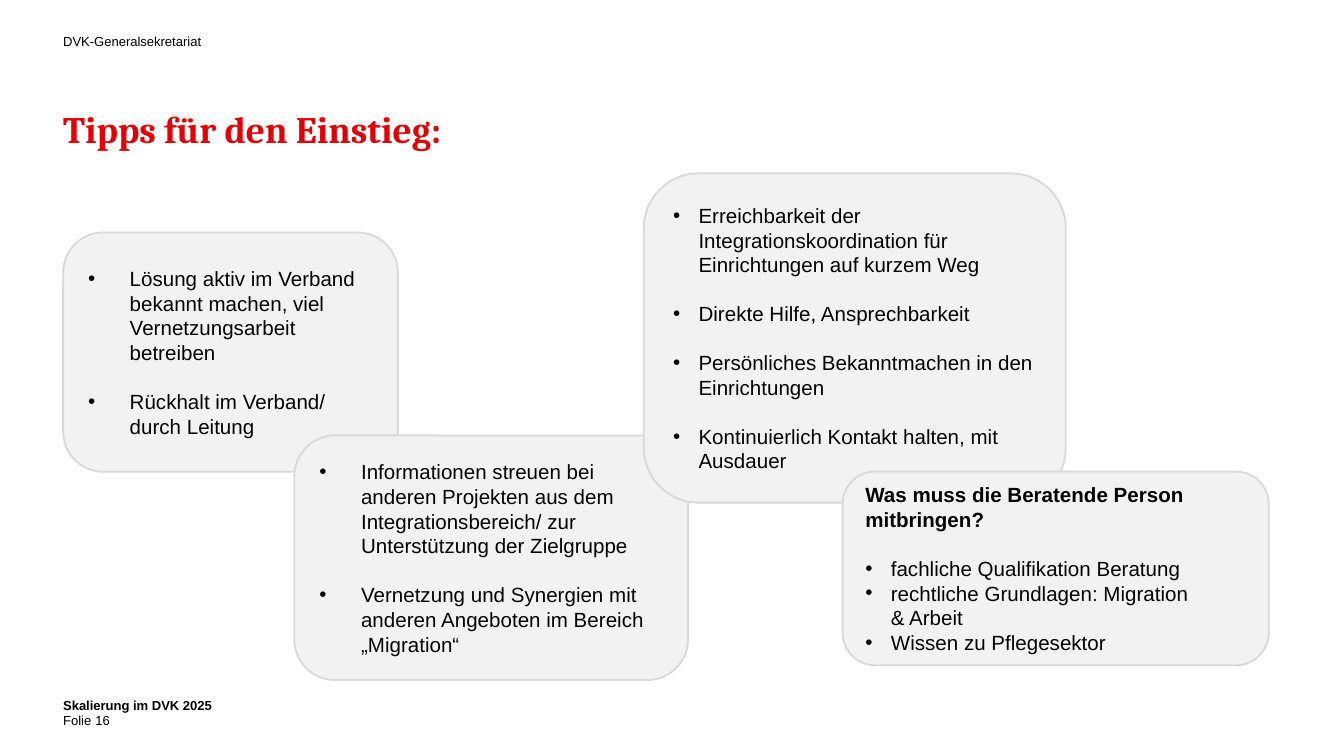
from lxml.etree import SubElement
from pptx import Presentation
from pptx.dml.color import RGBColor
from pptx.enum.shapes import MSO_SHAPE as Shape
from pptx.enum.text import MSO_ANCHOR as Anchor, PP_ALIGN as Align
from pptx.oxml.ns import qn
from pptx.util import Inches, Pt

BLACK = RGBColor(0x00, 0x00, 0x00)
RED = RGBColor(0xE6, 0x00, 0x05)
PALE_GREY = RGBColor(0xF2, 0xF2, 0xF2)
LINE_GREY = RGBColor(0xD9, 0xD9, 0xD9)

SMALL = {"name": "Arial", "size": Pt(7), "bold": False}
SMALL_BOLD = {**SMALL, "bold": True}
BODY = {"name": "Arial", "size": Pt(11), "bold": False}
BODY_BOLD = {**BODY, "bold": True}
HEADING = {"name": "Cambria", "size": Pt(20), "bold": True}

SLIDE_WIDTH = Inches(10)
SLIDE_HEIGHT = SLIDE_WIDTH * 9 // 16
BLOCK_GAP = Pt(13)

TITLE = "Tipps für den Einstieg:"
TITLE_AREA = (0.47, 0.79, 8.06, 0.64)
# text, area, anchor, font
MARGIN_TEXTS = [
    ("DVK-Generalsekretariat", (0.47, 0.24, 1.79, 0.12), Anchor.TOP, SMALL),
    ("Skalierung im DVK 2025", (0.47, 5.18, 9.06, 0.09), Anchor.TOP, SMALL_BOLD),
    ("Folie", (0.47, 5.29, 0.3, 0.13), Anchor.BOTTOM, SMALL),
    ("16", (0.71, 5.3, 2.25, 0.12), Anchor.BOTTOM, SMALL),
]
CARDS = [
    {"area": (0.47, 1.73, 2.49, 1.78), "indent": 0.31, "bullets": [
        "Lösung aktiv im Verband bekannt machen, viel Vernetzungsarbeit betreiben",
        "Rückhalt im Verband/ durch Leitung"]},
    {"area": (2.19, 3.24, 2.93, 1.82), "indent": 0.31, "bullets": [
        "Informationen streuen bei anderen Projekten aus dem "
        "Integrationsbereich/ zur Unterstützung der Zielgruppe",
        "Vernetzung und Synergien mit anderen Angeboten im Bereich „Migration“"]},
    {"area": (4.79, 1.29, 3.14, 2.45), "indent": 0.19, "bullets": [
        "Erreichbarkeit der Integrationskoordination für Einrichtungen auf kurzem Weg",
        "Direkte Hilfe, Ansprechbarkeit",
        "Persönliches Bekanntmachen in den Einrichtungen",
        "Kontinuierlich Kontakt halten, mit Ausdauer"]},
    {"area": (6.27, 3.51, 3.17, 1.44), "indent": 0.19,
     "heading": "Was muss die Beratende Person mitbringen?",
     "bullets": [
         "fachliche Qualifikation Beratung",
         "rechtliche Grundlagen: Migration \v& Arbeit",
         "Wissen zu Pflegesektor"]},
]


def inches(area):
    return [Inches(value) for value in area]


def format_font(para, style, color=BLACK):
    for name, value in style.items():
        setattr(para.font, name, value)
    para.font.color.rgb = color


def fill_plain(box, text, style, anchor, leading, color=BLACK):
    """Put one line without insets and with fixed line spacing into the box."""
    frame = box.text_frame
    frame.word_wrap = True
    frame.vertical_anchor = anchor
    for side in ("left", "top", "right", "bottom"):
        setattr(frame, f"margin_{side}", 0)
    para = frame.paragraphs[0]
    para.text = text
    para.alignment = Align.LEFT
    para.line_spacing = Pt(leading)
    format_font(para, style, color)


def add_bullet(para, indent):
    properties = para._p.get_or_add_pPr()
    properties.set("marL", str(Inches(indent)))
    properties.set("indent", str(-Inches(indent)))
    SubElement(properties, qn("a:buFont"), typeface="Arial")
    SubElement(properties, qn("a:buChar"), char="•")


def add_card(page, card):
    """Draw a card; bullets under a heading stay close, others are spread."""
    box = page.shapes.add_shape(Shape.ROUNDED_RECTANGLE, *inches(card["area"]))
    box.shadow.inherit = False
    box.fill.solid()
    box.fill.fore_color.rgb = PALE_GREY
    box.line.color.rgb = LINE_GREY
    box.line.width = Pt(1)
    frame = box.text_frame
    frame.word_wrap = True
    frame.vertical_anchor = Anchor.MIDDLE

    heading = card.get("heading")
    lines = [heading] * bool(heading) + card["bullets"]
    for index, line in enumerate(lines):
        para = frame.add_paragraph() if index else frame.paragraphs[0]
        para.text = line
        para.alignment = Align.LEFT
        if index == 1 or (index and not heading):
            para.space_before = BLOCK_GAP
        if line != heading:
            add_bullet(para, card["indent"])
        format_font(para, BODY_BOLD if line == heading else BODY)


def main():
    deck = Presentation()
    deck.slide_width, deck.slide_height = SLIDE_WIDTH, SLIDE_HEIGHT
    page = deck.slides.add_slide(deck.slide_layouts[5])

    title = page.shapes.title
    title.left, title.top, title.width, title.height = inches(TITLE_AREA)
    fill_plain(title, TITLE, HEADING, Anchor.TOP, 24, RED)

    for text, area, anchor, style in MARGIN_TEXTS:
        fill_plain(page.shapes.add_textbox(*inches(area)), text, style, anchor, 9)
    for card in CARDS:
        add_card(page, card)
    deck.save("out.pptx")


if __name__ == "__main__":
    main()
